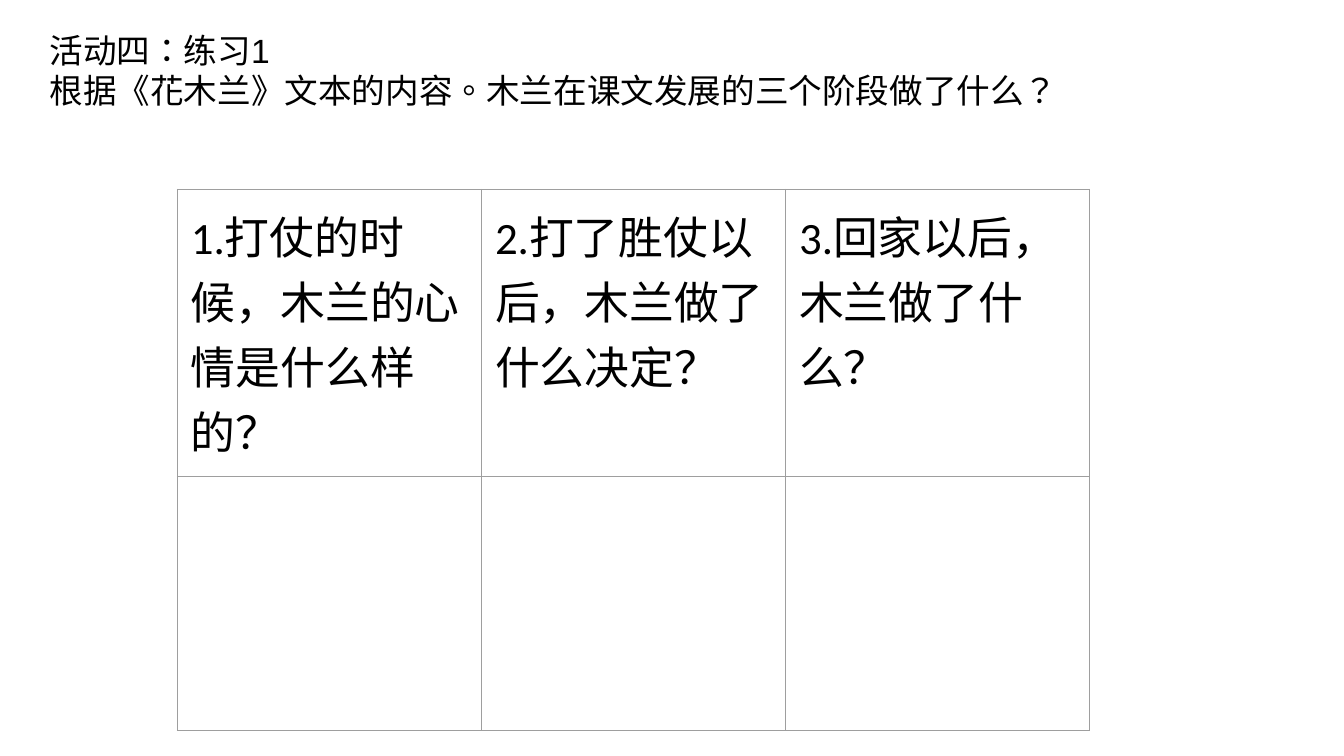
"""Build the exercise slide with its question table."""
from lxml.etree import SubElement
from pptx import Presentation
from pptx.dml.color import RGBColor
from pptx.oxml.ns import qn
from pptx.util import Inches, Pt

HUES = {"ink": "000000", "rule": "9E9E9E"}
TITLE = ["活动四：练习1", "根据《花木兰》文本的内容。木兰在课文发展的三个阶段做了什么？"]
ASKS = [
    "1.打仗的时候，木兰的心情是什么样的？",
    "2.打了胜仗以后，木兰做了什么决定？",
    "3.回家以后，木兰做了什么？",
]
WIDE = Inches(10)
HIGH = WIDE * 9 // 16
COL = Inches(6.79) // len(ASKS)
ROWS, PAD = [Inches(1.94), Inches(1.89)], Inches(0.1)


def write(para, text, size, face, lang):
    para._p.get_or_add_pPr().set("hangingPunct", "0")
    run = para.add_run()
    run.text = text
    run.font.size = Pt(size)
    run.font.name = face
    run.font.color.rgb = RGBColor.from_string(HUES["ink"])
    props = run._r.get_or_add_rPr()
    props.set("lang", lang)
    return props


def pad(box):
    box.margin_left = box.margin_right = PAD
    box.margin_top = box.margin_bottom = PAD


deck = Presentation()
deck.slide_width, deck.slide_height = WIDE, HIGH
slide = deck.slides.add_slide(deck.slide_layouts[6])

frame = slide.shapes.add_table(
    len(ROWS), len(ASKS), Inches(1.32), Inches(1.41), COL * len(ASKS), sum(ROWS)
)
table = frame.table
table.first_row = table.horz_banding = False
for col in table.columns:
    col.width = COL
for row, high in zip(table.rows, ROWS):
    row.height = high

for cell in table.iter_cells():
    pad(cell)
    props = cell._tc.get_or_add_tcPr()
    for side in ("a:lnL", "a:lnR", "a:lnT", "a:lnB"):
        line = SubElement(props, qn(side), w=str(Pt(0.75)))
        fill = SubElement(line, qn("a:solidFill"))
        SubElement(fill, qn("a:srgbClr"), val=HUES["rule"])
    cell.fill.background()

for col, ask in enumerate(ASKS):
    para = table.cell(0, col).text_frame.paragraphs[0]
    write(para, ask, 24, "Calibri", "zh-CN")

title = slide.shapes.add_textbox(
    Inches(0.27), Inches(0.12), Inches(8.03), Inches(1.29)
).text_frame
title.word_wrap = True
pad(title)
for index, text in enumerate(TITLE):
    para = title.add_paragraph() if index else title.paragraphs[0]
    props = write(para, text, 18, "Arial", "zh-TW")
    SubElement(props, qn("a:ea"), typeface="Calibri")

deck.save("out.pptx")
